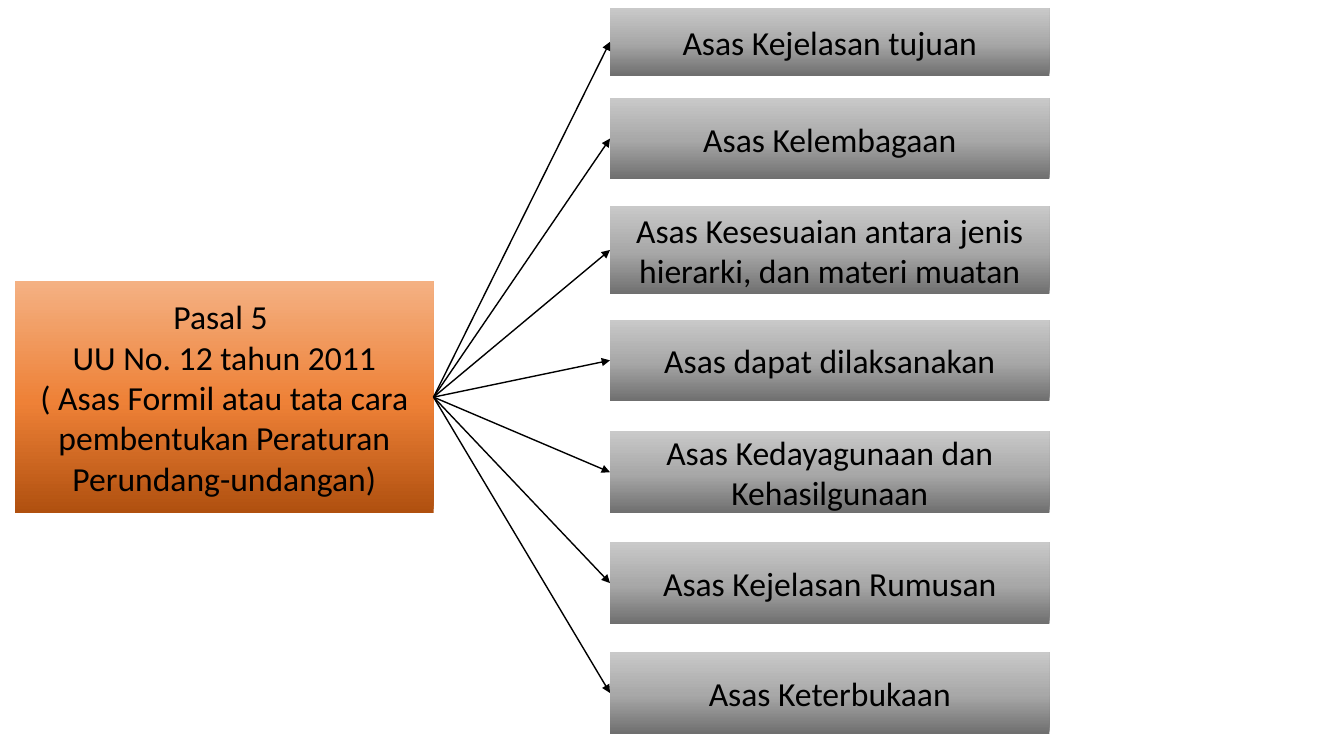
"""Build a slide linking Pasal 5 to its seven formal principles."""
from copy import deepcopy
from dataclasses import dataclass

from lxml.etree import SubElement
from pptx import Presentation
from pptx.dml.color import RGBColor
from pptx.enum.shapes import MSO_CONNECTOR as Connector, MSO_SHAPE as Preset
from pptx.enum.text import MSO_ANCHOR as Anchor, PP_ALIGN as Align
from pptx.oxml.ns import qn
from pptx.shapes.autoshape import Shape
from pptx.slide import Slide
from pptx.util import Inches, Pt

BLACK = RGBColor(0x00, 0x00, 0x00)
ORANGES = (RGBColor(0xB0, 0x50, 0x0F), RGBColor(0xEE, 0x81, 0x37), RGBColor(0xF4, 0xB1, 0x83))
GREYS = (RGBColor(0x6F, 0x6F, 0x6F), RGBColor(0xA8, 0xA8, 0xA8), RGBColor(0xC9, 0xC9, 0xC9))
STOP_POSITIONS = (0, 0.48, 1)
RIGHT_SIDE, LEFT_SIDE = 3, 1


@dataclass(frozen=True)
class Box:
    text: str
    top: float
    height: float = 0.81
    left: float = 6.05
    width: float = 4.36
    colours: tuple[RGBColor, ...] = GREYS


ARTICLE = Box(
    "Pasal 5 \nUU No. 12 tahun 2011\n"
    "( Asas Formil atau tata cara pembentukan Peraturan Perundang-undangan)",
    top=2.79, height=2.3, left=0.15, width=4.15, colours=ORANGES,
)
PRINCIPLES = (
    Box("Asas Kejelasan tujuan", 0.08, 0.67),
    Box("Asas Kelembagaan", 0.97),
    Box("Asas Kesesuaian antara jenis hierarki, dan materi muatan", 2.04, 0.88),
    Box("Asas dapat dilaksanakan", 3.17),
    Box("Asas Kedayagunaan dan Kehasilgunaan", 4.28),
    Box("Asas Kejelasan Rumusan", 5.38),
    Box("Asas Keterbukaan", 6.47),
)


def fill_gradient(shape: Shape, colours: tuple[RGBColor, ...]) -> None:
    """Fill a shape from bottom to top through three colours."""
    shape.fill.gradient()
    shape.fill.gradient_angle = 90
    stop_list = shape._element.spPr.find(qn("a:gradFill")).find(qn("a:gsLst"))
    stop_list.append(deepcopy(stop_list[0]))
    for stop, position, colour in zip(shape.fill.gradient_stops, STOP_POSITIONS, colours):
        stop.position = position
        stop.color.rgb = colour


def draw_box(page: Slide, box: Box) -> Shape:
    """Draw a gradient rectangle with centred text."""
    shape = page.shapes.add_shape(
        Preset.RECTANGLE, Inches(box.left), Inches(box.top), Inches(box.width), Inches(box.height)
    )
    shape.shadow.inherit = False
    shape.line.fill.background()
    fill_gradient(shape, box.colours)
    frame = shape.text_frame
    frame.word_wrap = True
    frame.vertical_anchor = Anchor.MIDDLE
    frame.text = box.text
    for para in frame.paragraphs:
        para.alignment = Align.CENTER
        for span in para.runs:
            span.font.name = "Calibri"
            span.font.size = Pt(24)
            span.font.color.rgb = BLACK
    return shape


def draw_arrow(page: Slide, source: Shape, target: Shape) -> None:
    """Join the right side of one box to the left side of another."""
    arrow = page.shapes.add_connector(Connector.STRAIGHT, 0, 0, 0, 0)
    arrow.begin_connect(source, RIGHT_SIDE)
    arrow.end_connect(target, LEFT_SIDE)
    arrow.line.color.rgb = BLACK
    arrow.line.width = Pt(1)
    SubElement(arrow.line._get_or_add_ln(), qn("a:tailEnd"), type="triangle")
    SubElement(arrow._element.spPr, qn("a:effectLst"))


def main() -> None:
    """Build and save the deck."""
    deck = Presentation()
    deck.slide_width, deck.slide_height = Inches(13.33), Inches(7.5)
    page = deck.slides.add_slide(deck.slide_layouts[6])
    article = draw_box(page, ARTICLE)
    principles = [draw_box(page, box) for box in PRINCIPLES]
    for principle in principles:
        draw_arrow(page, article, principle)
    deck.save("out.pptx")


if __name__ == "__main__":
    main()
